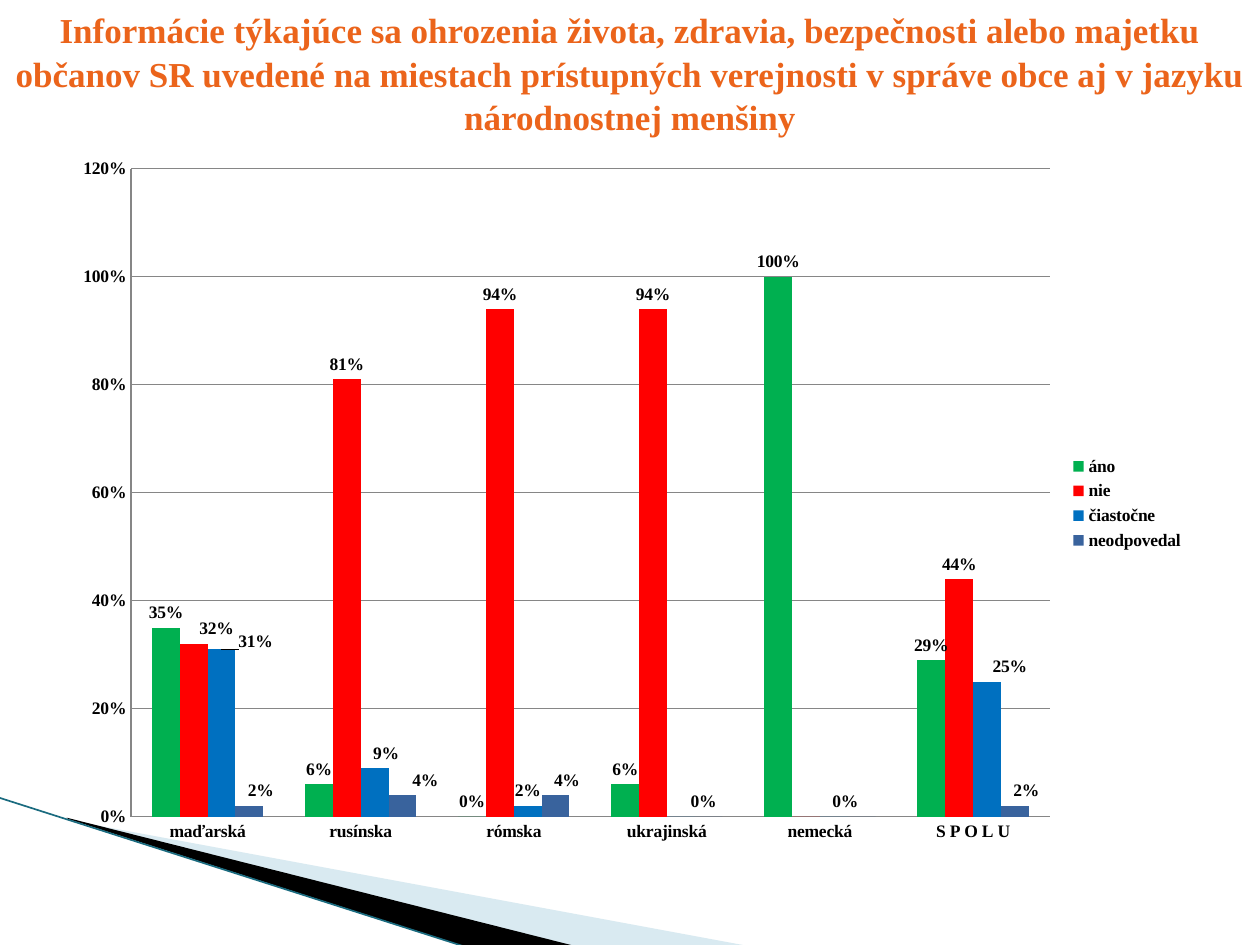
from lxml import etree
from pptx import Presentation
from pptx.chart.data import CategoryChartData
from pptx.dml.color import RGBColor
from pptx.enum.chart import XL_CHART_TYPE as CT, XL_LABEL_POSITION as LP
from pptx.enum.chart import XL_LEGEND_POSITION as LEG, XL_TICK_MARK as TM
from pptx.enum.shapes import MSO_CONNECTOR
from pptx.enum.text import MSO_ANCHOR, PP_ALIGN
from pptx.oxml import parse_xml
from pptx.oxml.ns import nsdecls, qn
from pptx.util import Inches, Pt

FONT = "Times New Roman"
GRAY = "868686"


def rgb(code):
    return RGBColor.from_string(code)


def manual_layout(x, y, size=""):
    return parse_xml(
        f'<c:layout {nsdecls("c")}><c:manualLayout>{size and "<c:layoutTarget val=%r/>" % "inner"}'
        f'{size and "<c:xMode val=%r/><c:yMode val=%r/>" % ("edge", "edge")}'
        f'<c:x val="{x}"/><c:y val="{y}"/>{size}</c:manualLayout></c:layout>')


prs = Presentation()
prs.slide_width, prs.slide_height = Inches(10), Inches(7.5)
s = prs.slides.add_slide(prs.slide_layouts[6])

# Corner wedges
wedges = [
    ("A0CBDC", 40, [(0.55, 6.51), (5.95, 7.51), (4.56, 7.51), (0.55, 6.5)]),
    ("000000", 100, [(0.53, 6.49), (4.57, 7.51), (3.72, 7.52), (0.54, 6.5)]),
]
for color, opacity, points in wedges:
    start, *rest = [(Inches(x), Inches(y)) for x, y in points]
    fb = s.shapes.build_freeform(*start)
    fb.add_line_segments(rest)
    sp = fb.convert_to_shape()
    sp.shadow.inherit = False
    sp.fill.solid()
    sp.fill.fore_color.rgb = rgb(color)
    sp.line.fill.background()
    if opacity < 100:
        clr = sp.fill._xPr.find(qn("a:solidFill"))[0]
        etree.SubElement(clr, qn("a:alpha"), val=str(opacity * 1000))

# Corner line
line = s.shapes.add_connector(MSO_CONNECTOR.STRAIGHT, Inches(-0.01), Inches(6.33),
                              Inches(3.71), Inches(7.52))
line.line.color.rgb = rgb("1A6B7F")
line.line.width = Pt(0.95)
etree.SubElement(line._element.spPr, qn("a:effectLst"))

# Title
tf = s.shapes.add_textbox(0, 0, Inches(10), Inches(1.15)).text_frame
tf.word_wrap = True
tf.vertical_anchor = MSO_ANCHOR.MIDDLE
p = tf.paragraphs[0]
p.text = ("Informácie týkajúce sa ohrozenia života, zdravia, bezpečnosti alebo majetku "
          "občanov SR uvedené na miestach prístupných verejnosti v správe obce aj v jazyku "
          "národnostnej menšiny")
p.alignment = PP_ALIGN.CENTER
p.line_spacing = 1.04
p.font.name, p.font.size, p.font.bold = FONT, Pt(20), True
p.font.color.rgb = rgb("EB641B")

# Chart: name, color, values, shifted labels (point: dx, dy), removed labels
series = [
    ("áno", "00B050", [0.35, 0.06, 0, 0.06, 1, 0.29], {}, []),
    ("nie", "FF0000", [0.32, 0.81, 0.94, 0.94, 0, 0.44], {0: (0.02, 0)}, [4]),
    ("čiastočne", "0070C0", [0.31, 0.09, 0.02, 0, 0, 0.25],
     {0: (0.03, 0.01), 1: (0.01, 0), 3: (0.02, 0), 4: (0.01, 0), 5: (0.02, 0)}, []),
    ("neodpovedal", "39639D", [0.02, 0.04, 0.04, 0, 0, 0.02],
     {0: (0.01, 0), 1: (0.02, 0), 2: (0.01, 0), 5: (0.01, 0)}, [3, 4]),
]
data = CategoryChartData(number_format="0%")
data.categories = ["maďarská", "rusínska", "rómska", "ukrajinská", "nemecká", "S P O L U"]
for name, _, values, _, _ in series:
    data.add_series(name, values)
chart = s.shapes.add_chart(CT.COLUMN_CLUSTERED, Inches(0.5), Inches(1.17),
                           Inches(9), Inches(5.65), data).chart
chart.has_title = False
chart.font.name, chart.font.size, chart.font.bold = FONT, Pt(10), True
chart.font.color.rgb = rgb("000000")
chart.has_legend = True
chart.legend.position = LEG.RIGHT
chart.legend.include_in_layout = False

# Plot area and axes
area = chart._chartSpace.chart.plotArea
for old in area.findall(qn("c:layout")):
    area.remove(old)
area.insert(0, manual_layout(0.06, 0.03, '<c:w val="0.81"/><c:h val="0.91"/>'))
for axis in (chart.category_axis, chart.value_axis):
    axis.major_tick_mark = axis.minor_tick_mark = TM.NONE
    axis.format.line.color.rgb = rgb(GRAY)
val = chart.value_axis
val.minimum_scale, val.maximum_scale, val.major_unit = 0, 1.2, 0.2
val.major_gridlines.format.line.color.rgb = rgb(GRAY)
val.tick_labels.number_format = "0%"
val.tick_labels.number_format_is_linked = False

# Columns and their labels
plot = chart.plots[0]
plot.gap_width, plot.overlap = 150, 0
plot.vary_by_categories = False
for ser, (_, color, _, shifts, removed) in zip(plot.series, series):
    ser.format.fill.solid()
    ser.format.fill.fore_color.rgb = rgb(color)
    labels = ser.data_labels
    labels.show_value = True
    labels.number_format, labels.number_format_is_linked = "0%", False
    labels.position = LP.OUTSIDE_END
    for i in sorted([*shifts, *removed]):
        ser.points[i].data_label.position = LP.OUTSIDE_END
        d = ser._element.xpath(f'c:dLbls/c:dLbl[c:idx/@val="{i}"]')[0]
        if i in shifts:
            d.insert(1, manual_layout(*shifts[i]))
        else:
            for child in list(d)[1:]:
                d.remove(child)
            etree.SubElement(d, qn("c:delete"), val="1")

prs.save("out.pptx")
